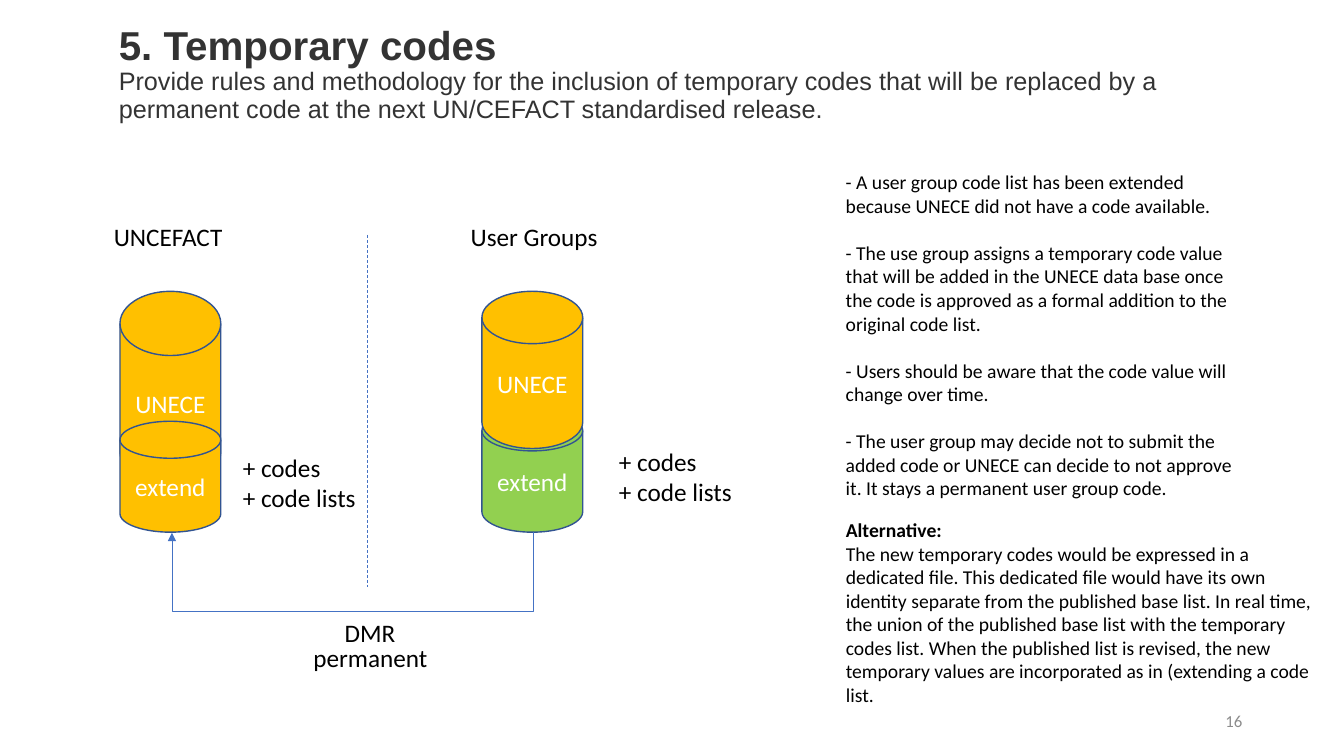
"""Build the slide on temporary codes shared by UNCEFACT and user groups."""
from dataclasses import dataclass

from lxml import etree
from pptx import Presentation
from pptx import util as u
from pptx.dml.color import RGBColor
from pptx.enum import dml, shapes, text
from pptx.oxml.ns import qn


@dataclass(frozen=True)
class Theme:
    """Colours, fonts and type sizes of the slide."""
    heading: str = "333333"
    ink: str = "000000"
    white: str = "FFFFFF"
    muted: str = "8C8C8C"
    amber: str = "FFC000"
    green: str = "92D050"
    outline: str = "325491"
    link: str = "4472C4"
    heading_font: str = "Arial"
    body_font: str = "Calibri"
    title_size: float = 28.8
    label_size: float = 18
    note_size: float = 14
    number_size: float = 12
    note_gap: float = 16.8


THEME = Theme()

RULES = (
    "- A user group code list has been extended because UNECE did not have a code available.",
    "- The use group assigns a temporary code value that will be added in the UNECE data base "
    "once the code is approved as a formal addition to the original code list.",
    "- Users should be aware that the code value will change over time.",
    "- The user group may decide not to submit the added code or UNECE can decide to not "
    "approve it. It stays a permanent user group code.",
)
ALTERNATIVE = (
    "Alternative:",
    "The new temporary codes would be expressed in a dedicated file. This dedicated file would "
    "have its own identity separate from the published base list. In real time, the union of "
    "the published base list with the temporary codes list. When the published list is revised, "
    "the new temporary values are incorporated as in (extending a code list.",
)
SUBTITLE = (
    "Provide rules and methodology for the inclusion of temporary codes that will be replaced "
    "by a permanent code at the next UN/CEFACT standardised release."
)


def style(para, size, color=THEME.ink, name=THEME.body_font, bold=False):
    """Set the font of a paragraph."""
    para.font.size = u.Pt(size)
    para.font.name = name
    para.font.bold = bold
    para.font.color.rgb = RGBColor.from_string(color)


def add_text(page, area, lines, size, color=THEME.ink, wrap=True):
    """Add a text box with one paragraph per line and return its frame."""
    frame = page.shapes.add_textbox(*map(u.Inches, area)).text_frame
    frame.word_wrap = wrap
    frame.text = "\n".join(lines)
    for para in frame.paragraphs:
        style(para, size, color)
    return frame


def add_title(page):
    """Add the bold title and the plain subtitle under it."""
    frame = add_text(page, (1.08, 0.43, 11.5, 0.62), ("5. Temporary codes", SUBTITLE),
                     THEME.label_size)
    frame.vertical_anchor = text.MSO_ANCHOR.MIDDLE
    heading, subtitle = frame.paragraphs
    style(heading, THEME.title_size, THEME.heading, THEME.heading_font, True)
    style(subtitle, THEME.label_size, THEME.heading, THEME.heading_font)
    for para in frame.paragraphs:
        para.line_spacing = 0.9


def add_label(page, left, top, width, *lines):
    """Add a diagram label that does not wrap."""
    height = 0.4 if len(lines) == 1 else 0.71
    frame = add_text(page, (left, top, width, height), lines, THEME.label_size, wrap=False)
    frame.auto_size = text.MSO_AUTO_SIZE.SHAPE_TO_FIT_TEXT


def add_disk(page, left, top, height, caption, fill):
    """Add a captioned code list store."""
    disk = page.shapes.add_shape(shapes.MSO_SHAPE.FLOWCHART_MAGNETIC_DISK,
                                 *map(u.Inches, (left, top, 1, height)))
    disk.shadow.inherit = False
    disk.fill.solid()
    disk.fill.fore_color.rgb = RGBColor.from_string(fill)
    disk.line.color.rgb = RGBColor.from_string(THEME.outline)
    disk.line.width = u.Pt(1)
    frame = disk.text_frame
    frame.vertical_anchor = text.MSO_ANCHOR.MIDDLE
    frame.text = caption
    para = frame.paragraphs[0]
    para.alignment = text.PP_ALIGN.CENTER
    style(para, THEME.label_size, THEME.white)


def add_line(page, kind, *ends):
    """Add a thin connector without a shadow."""
    line = page.shapes.add_connector(kind, *map(u.Inches, ends))
    line.line.color.rgb = RGBColor.from_string(THEME.link)
    line.line.width = u.Pt(0.5)
    etree.SubElement(line.element.spPr, qn("a:effectLst"))
    return line


def add_divider(page):
    """Add the dashed line between the two parties."""
    divider = add_line(page, shapes.MSO_CONNECTOR.STRAIGHT, 3.64, 2.33, 3.64, 5.82)
    divider.line.dash_style = dml.MSO_LINE.DASH


def add_return_arrow(page):
    """Add the elbow arrow that runs below the stores, from user group to UNCEFACT."""
    span, rise, drop = 3.58, 0.01, 0.8
    left, top = 3.49, 3.49
    arrow = add_line(page, shapes.MSO_CONNECTOR.ELBOW, left, top, left + rise, top + span)
    properties = arrow.element.spPr
    properties.find(qn("a:xfrm")).set("rot", str(90 * 60000))
    guides = properties.find(qn("a:prstGeom")).get_or_add_avLst()
    etree.SubElement(guides, qn("a:gd"), name="adj1", fmla=f"val {round(drop / rise * 100000)}")
    etree.SubElement(properties.find(qn("a:ln")), qn("a:tailEnd"), type="triangle")


def add_notes_column(page):
    """Add the rules and the alternative on the right."""
    rules = add_text(page, (8.29, 1.64, 4.04, 3.4), RULES, THEME.note_size)
    for para in rules.paragraphs[1:]:
        para.space_before = u.Pt(THEME.note_gap)
    alternative = add_text(page, (8.29, 5.09, 4.95, 1.99), ALTERNATIVE, THEME.note_size)
    alternative.paragraphs[0].font.bold = True


def add_page_number(page):
    """Add the slide number at the lower right."""
    frame = add_text(page, (9.42, 6.95, 3, 0.4), ("16",), THEME.number_size, THEME.muted)
    frame.vertical_anchor = text.MSO_ANCHOR.MIDDLE
    frame.paragraphs[0].alignment = text.PP_ALIGN.RIGHT


def main():
    """Build and save the deck."""
    deck = Presentation()
    deck.slide_width, deck.slide_height = u.Inches(13.33), u.Inches(7.5)
    page = deck.slides.add_slide(deck.slide_layouts[6])
    base, group = 1.19, 4.78

    add_title(page)
    add_divider(page)
    add_disk(page, base, 2.89, 1.91, "UNECE", THEME.amber)
    add_disk(page, base, 4.18, 1.1, "extend", THEME.amber)
    add_disk(page, group, 4.07, 1.21, "extend", THEME.green)
    add_disk(page, group, 2.89, 1.56, "UNECE", THEME.amber)
    add_return_arrow(page)

    add_label(page, 1.03, 2.15, 1.29, "UNCEFACT")
    add_label(page, 4.57, 2.15, 1.47, "User Groups")
    for left, top in ((2.31, 4.44), (6.04, 4.38)):
        add_label(page, left, top, 1.33, "+ codes", "+ code lists")
    add_label(page, 3.32, 6.08, 0.71, "DMR")
    add_label(page, 3.01, 6.32, 1.35, "permanent")

    add_notes_column(page)
    add_page_number(page)
    deck.save("out.pptx")


if __name__ == "__main__":
    main()
